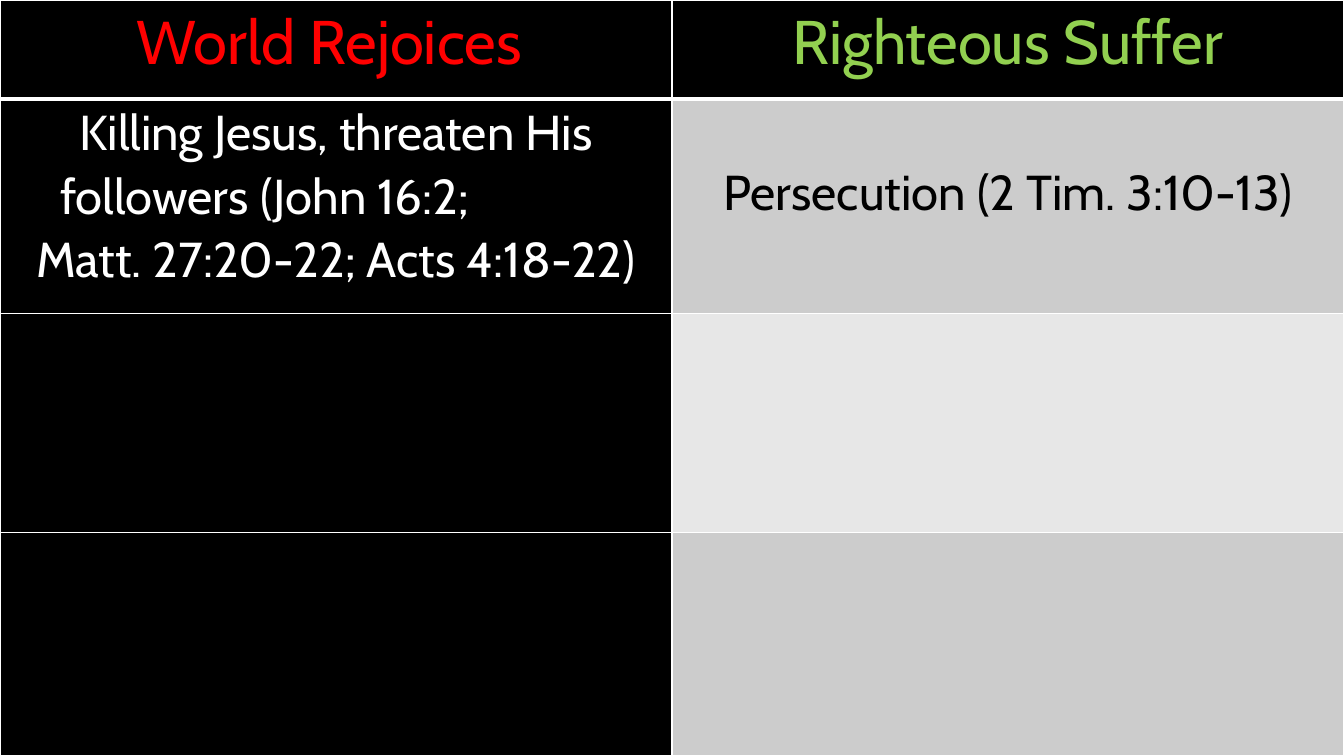
from dataclasses import dataclass

from lxml import etree
from pptx import Presentation
from pptx import util as u
from pptx.dml.color import RGBColor
from pptx.enum import text
from pptx.oxml import ns


@dataclass(frozen=True)
class Theme:
    font: str = "Cabin"
    heading_size: float = 44
    body_size: float = 35
    line_spacing: float = 1.07
    black: str = "000000"
    white: str = "FFFFFF"
    red: str = "FF0000"
    green: str = "92D050"
    grey: str = "CCCCCC"
    light_grey: str = "E7E7E7"
    rule: float = 1
    header_rule: float = 3


THEME = Theme()
SLIDE_WIDTH, SLIDE_HEIGHT = 960, 540
HEADER_HEIGHT = 70.5
BODY_HEIGHTS = (153.5, 156.5, 159.5)
CELL_INSET = 5
FOLLOWERS_INDENT = 38
PERSECUTION_DROP = 43


def draw_borders(cell, top, bottom):
    """Rule the four sides of a cell in white."""
    properties = cell._tc.get_or_add_tcPr()
    sides = {"lnL": THEME.rule, "lnR": THEME.rule, "lnT": top, "lnB": bottom}
    for side, width in sides.items():
        line = etree.SubElement(properties, ns.qn(f"a:{side}"), w=str(u.Pt(width)))
        fill = etree.SubElement(line, ns.qn("a:solidFill"))
        etree.SubElement(fill, ns.qn("a:srgbClr"), val=THEME.white)


def style_cell(cell, fill, top, bottom):
    draw_borders(cell, top, bottom)
    cell.fill.solid()
    cell.fill.fore_color.rgb = RGBColor.from_string(fill)
    cell.margin_left = cell.margin_right = u.Pt(CELL_INSET)
    cell.margin_top = cell.margin_bottom = u.Pt(0)
    cell.vertical_anchor = text.MSO_ANCHOR.TOP


def write_cell(cell, wording, size, color):
    cell.text_frame.text = wording
    for paragraph in cell.text_frame.paragraphs:
        paragraph.alignment = text.PP_ALIGN.CENTER
        paragraph.line_spacing = THEME.line_spacing
        for run in paragraph.runs:
            run.font.name = THEME.font
            run.font.size = u.Pt(size)
            run.font.bold = False
            run.font.color.rgb = RGBColor.from_string(color)


def add_comparison(slide, left, top, width, height):
    """Fill the given box with the two-column comparison."""
    row_heights = (HEADER_HEIGHT, *BODY_HEIGHTS)
    comparison = slide.shapes.add_table(
        len(row_heights), 2, u.Pt(left), u.Pt(top), u.Pt(width), u.Pt(height)
    ).table
    for column in comparison.columns:
        column.width = u.Pt(width / 2)
    for row, row_height in zip(comparison.rows, row_heights):
        row.height = u.Pt(row_height * height / sum(row_heights))

    # Black left column and header, banded grey on the right
    right_fills = (THEME.black, THEME.grey, THEME.light_grey, THEME.grey)
    for index, right_fill in enumerate(right_fills):
        upper = THEME.header_rule if index == 1 else THEME.rule
        lower = THEME.header_rule if index == 0 else THEME.rule
        for column, fill in enumerate((THEME.black, right_fill)):
            style_cell(comparison.cell(index, column), fill, upper, lower)

    # Headings
    write_cell(comparison.cell(0, 0), "World Rejoices ", THEME.heading_size, THEME.red)
    write_cell(comparison.cell(0, 1), "Righteous Suffer", THEME.heading_size, THEME.green)

    # First pair of points
    killing = comparison.cell(1, 0)
    write_cell(
        killing,
        "Killing Jesus, threaten His\nfollowers (John 16:2;\nMatt. 27:20-22; Acts 4:18-22)",
        THEME.body_size,
        THEME.white,
    )
    followers = killing.text_frame.paragraphs[1]
    followers.alignment = text.PP_ALIGN.LEFT
    followers._p.get_or_add_pPr().set("marL", str(u.Pt(FOLLOWERS_INDENT)))

    persecution = comparison.cell(1, 1)
    write_cell(persecution, "Persecution (2 Tim. 3:10-13)", THEME.body_size, THEME.black)
    persecution.margin_top = u.Pt(PERSECUTION_DROP)


def main():
    deck = Presentation()
    deck.slide_width, deck.slide_height = u.Pt(SLIDE_WIDTH), u.Pt(SLIDE_HEIGHT)
    slide = deck.slides.add_slide(deck.slide_layouts[6])
    backdrop = slide.background.fill
    backdrop.solid()
    backdrop.fore_color.rgb = RGBColor.from_string(THEME.black)
    add_comparison(slide, 0, 0, SLIDE_WIDTH, SLIDE_HEIGHT)
    deck.save("out.pptx")


if __name__ == "__main__":
    main()
